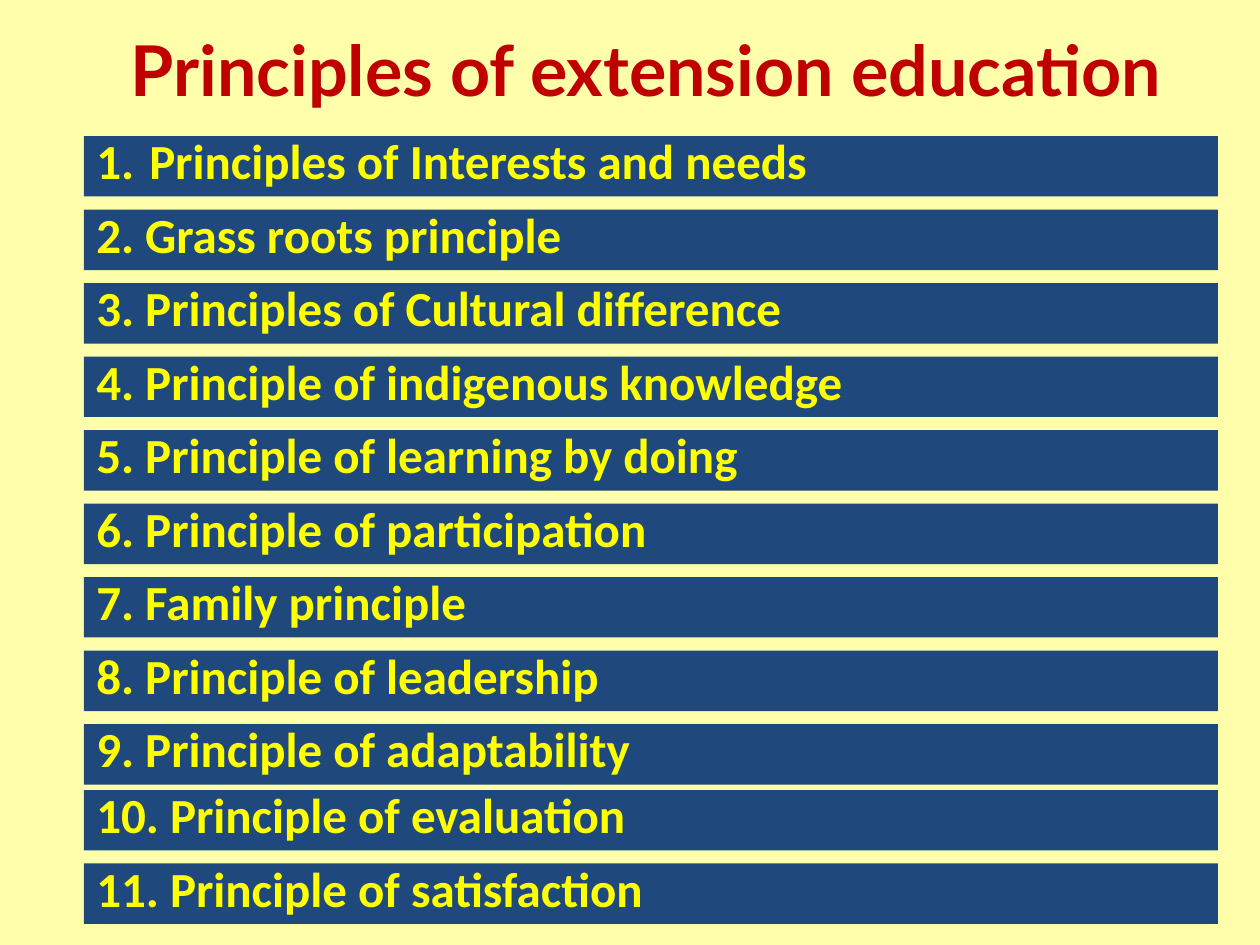
from dataclasses import dataclass

from lxml import etree
from pptx import Presentation
from pptx.dml.color import RGBColor
from pptx.enum.shapes import MSO_SHAPE
from pptx.enum.text import MSO_ANCHOR, MSO_AUTO_SIZE, PP_ALIGN
from pptx.oxml.ns import qn
from pptx.util import Inches, Pt

RECTANGLE = MSO_SHAPE.RECTANGLE
TOP, MIDDLE = MSO_ANCHOR.TOP, MSO_ANCHOR.MIDDLE
LEFT, CENTER = PP_ALIGN.LEFT, PP_ALIGN.CENTER
GROW = MSO_AUTO_SIZE.SHAPE_TO_FIT_TEXT

TITLE = "Principles of extension education"
NUMBERED_PRINCIPLE = "Principles of Interests and needs"
MAIN_PRINCIPLES = [
    NUMBERED_PRINCIPLE,
    "2. Grass roots principle",
    "3. Principles of Cultural difference",
    "4. Principle of indigenous knowledge",
    "5. Principle of learning by doing",
    "6. Principle of participation",
    "7. Family principle",
    "8. Principle of leadership",
    "9. Principle of adaptability",
]
CLOSING_PRINCIPLES = ["10. Principle of evaluation", "11. Principle of satisfaction"]


@dataclass(frozen=True)
class Theme:
    background: str = "FFFFAB"
    title: str = "C00000"
    bar: str = "1F497D"
    bar_text: str = "FFFF00"
    title_font: str = "Lato"
    bar_font: str = "Calibri"
    title_size: int = 40
    bar_size: int = 28


THEME = Theme()
SLIDE_WIDTH, SLIDE_HEIGHT = Inches(10), Inches(7.5)
BAR_LEFT, BAR_WIDTH = SLIDE_WIDTH / 15, SLIDE_WIDTH * 0.9
BAR_HEIGHT = Inches(0.48)
ROW_PITCH = SLIDE_WIDTH * 7 / 120
HANGING_INDENT = Inches(0.42)
GROUPS = [(Inches(1.08), MAIN_PRINCIPLES), (Inches(6.27), CLOSING_PRINCIPLES)]


def style_text(paragraph, font_name, size, color):
    font = paragraph.runs[0].font
    font.name = font_name
    font.size = Pt(size)
    font.bold = True
    font.color.rgb = RGBColor.from_string(color)


def add_title(slide):
    box = slide.shapes.add_textbox(
        Inches(0.5), Inches(0.08), Inches(9.25), Inches(0.92)
    )
    text_frame = box.text_frame
    text_frame.word_wrap = True
    text_frame.vertical_anchor = MIDDLE
    text_frame.text = TITLE
    paragraph = text_frame.paragraphs[0]
    paragraph.alignment = CENTER
    style_text(paragraph, THEME.title_font, THEME.title_size, THEME.title)


def add_bar(slide, top, text):
    shape = slide.shapes.add_shape(
        RECTANGLE, round(BAR_LEFT), round(top), round(BAR_WIDTH), BAR_HEIGHT
    )
    shape.shadow.inherit = False
    shape.fill.solid()
    shape.fill.fore_color.rgb = RGBColor.from_string(THEME.bar)
    shape.line.fill.background()
    text_frame = shape.text_frame
    text_frame.word_wrap = True
    text_frame.auto_size = GROW
    text_frame.vertical_anchor = TOP
    text_frame.text = text
    paragraph = text_frame.paragraphs[0]
    paragraph.alignment = LEFT
    paragraph.line_spacing = 0.8
    properties = paragraph._p.get_or_add_pPr()
    properties.set("marL", str(HANGING_INDENT))
    properties.set("indent", str(-HANGING_INDENT))
    if text == NUMBERED_PRINCIPLE:
        etree.SubElement(properties, qn("a:buFont"), typeface="+mj-lt")
        etree.SubElement(properties, qn("a:buAutoNum"), type="arabicPeriod")
    else:
        etree.SubElement(properties, qn("a:buNone"))
    style_text(paragraph, THEME.bar_font, THEME.bar_size, THEME.bar_text)


def main():
    presentation = Presentation()
    presentation.slide_width, presentation.slide_height = SLIDE_WIDTH, SLIDE_HEIGHT
    slide = presentation.slides.add_slide(presentation.slide_layouts[6])
    slide.background.fill.solid()
    slide.background.fill.fore_color.rgb = RGBColor.from_string(THEME.background)
    add_title(slide)
    for group_top, principles in GROUPS:
        for row, principle in enumerate(principles):
            add_bar(slide, group_top + row * ROW_PITCH, principle)
    presentation.save("out.pptx")


if __name__ == "__main__":
    main()
